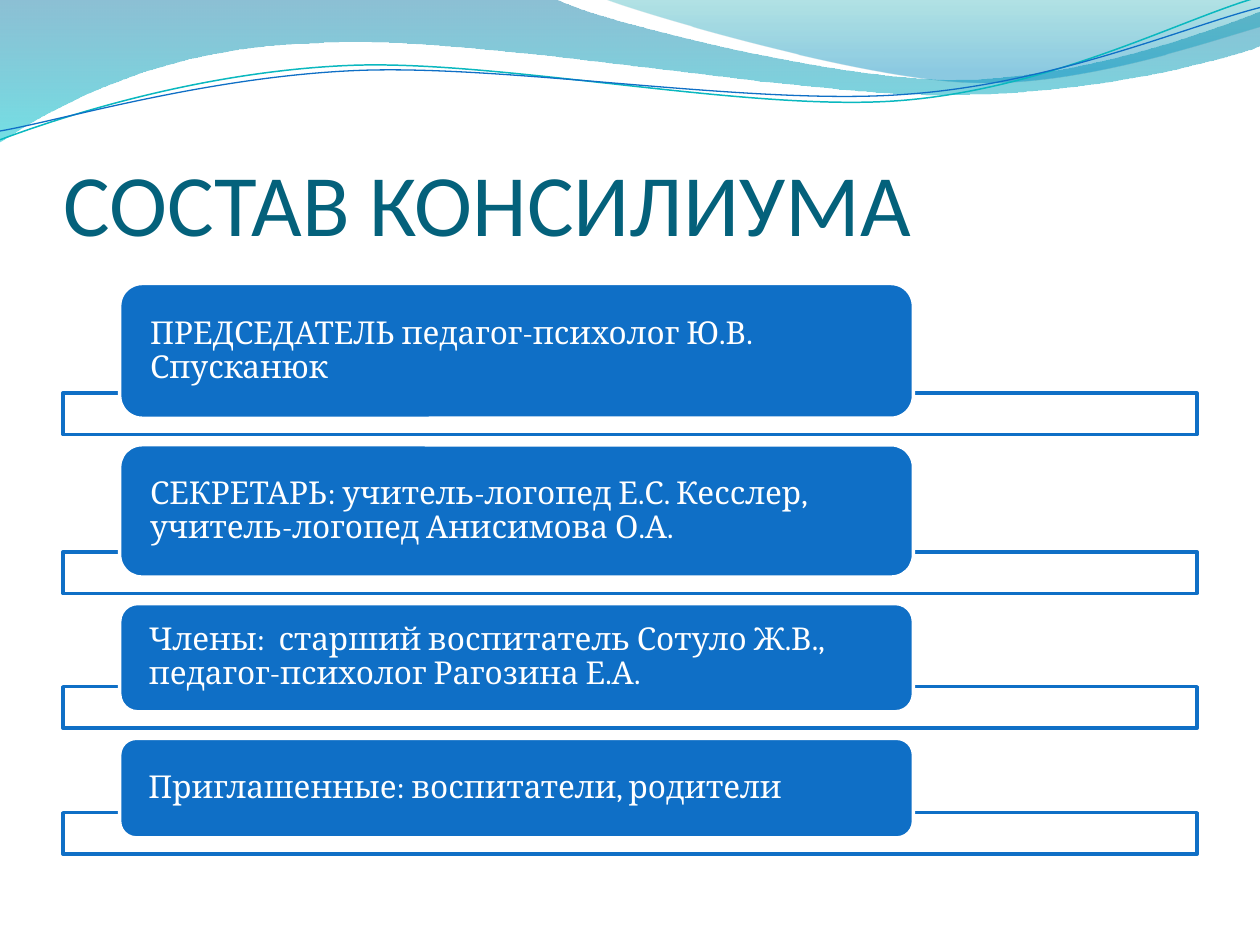
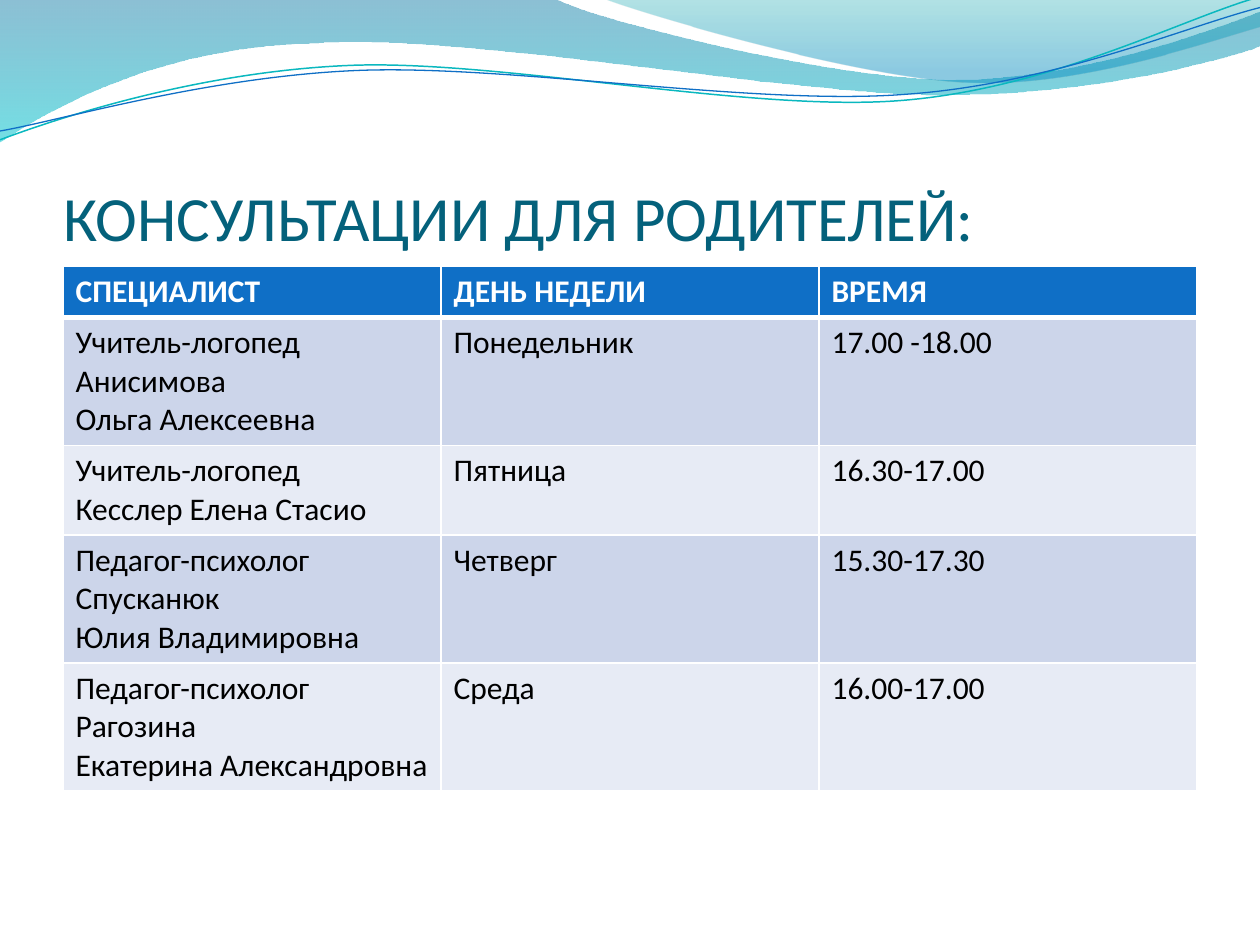
from pptx import Presentation
from pptx.dml.color import RGBColor
from pptx.enum.shapes import MSO_SHAPE
from pptx.enum.text import MSO_ANCHOR, PP_ALIGN
from pptx.oxml import parse_xml
from pptx.oxml.ns import nsdecls, qn
from pptx.util import Pt

PX = 9144
RECT, ROUND = MSO_SHAPE.RECTANGLE, MSO_SHAPE.ROUNDED_RECTANGLE
TOP, MIDDLE, BOTTOM = MSO_ANCHOR.TOP, MSO_ANCHOR.MIDDLE, MSO_ANCHOR.BOTTOM
LEFT = PP_ALIGN.LEFT

WHITE, BLACK, BLUE, TEAL, TITLE = "FFFFFF", "000000", "0F6FC6", "0AB8BF", "04617B"
BANDS = ("CCD5EA", "E7EBF5")
SANS, SERIF = "Calibri", "Cambria"
MARGIN, CONTENT_W = 50, 900

LEFT_WAVE = [
    (0, 0), (440, -1), (476, 17, 664, 63, 758, 63), (853, 63, 958, 26, 1000, 9),
    (1001, 36), (983, 44, 870, 76, 746, 75), (622, 75, 382, 28, 257, 34),
    (129, 36, 46, 83, -1, 113),
]
RIGHT_WAVE = [
    (479, -1), (509, 11, 682, 62, 769, 65), (856, 69, 961, 32, 1000, 21), (1000, 0),
]
TEAL_LINE = [
    (0, 111), (48, 93, 158, 57, 277, 52), (395, 47, 593, 89, 713, 80),
    (833, 71, 938, 15, 998, -2),
]
BLUE_LINE = [
    (0, 104), (47, 96, 164, 61, 283, 56), (403, 51, 597, 84, 717, 75),
    (836, 67, 941, 21, 1000, 6),
]

MEMBERS = [
    ("ПРЕДСЕДАТЕЛЬ педагог-психолог Ю.В. Спусканюк", 107),
    ("СЕКРЕТАРЬ: учитель-логопед Е.С. Кесслер, учитель-логопед Анисимова О.А.", 105),
    ("Члены:  старший воспитатель Сотуло Ж.В., педагог-психолог Рагозина Е.А.", 86),
    ("Приглашенные: воспитатели, родители", 79),
]
CONSULTATIONS = [
    ("СПЕЦИАЛИСТ", "ДЕНЬ НЕДЕЛИ", "ВРЕМЯ"),
    ("Учитель-логопед\nАнисимова\nОльга Алексеевна", "Понедельник", "17.00 -18.00"),
    ("Учитель-логопед\nКесслер Елена Стасио", "Пятница", "16.30-17.00"),
    ("Педагог-психолог\nСпусканюк\nЮлия Владимировна", "Четверг", "15.30-17.30"),
    ("Педагог-психолог\nРагозина\nЕкатерина Александровна", "Среда", "16.00-17.00"),
]


def rgb(color):
    return RGBColor.from_string(color)


def emu(*lengths):
    return [n * PX for n in lengths]


def style_text(tf, font, size, color, bold=False):
    for p in tf.paragraphs:
        p.alignment = LEFT
        p.font.name, p.font.size, p.font.bold = font, Pt(size), bold
        p.font.color.rgb = rgb(color)


def set_insets(tf, left, top, right, bottom):
    tf.margin_left, tf.margin_top, tf.margin_right, tf.margin_bottom = emu(
        left, top, right, bottom)


def bend_segments(sp, segments):
    lines = iter(list(sp.element.iter(qn("a:lnTo"))))
    for seg in segments:
        line = next(lines)
        if len(seg) == 2:
            continue
        curve = parse_xml(f'<a:cubicBezTo {nsdecls("a")}/>')
        line.addprevious(curve)
        for part in (line, next(lines), next(lines)):
            curve.append(part[0])
            part.getparent().remove(part)


def add_outline(slide, outline, close):
    start, *segments = outline
    points = [emu(*seg[i:i + 2]) for seg in segments for i in range(0, len(seg), 2)]
    builder = slide.shapes.build_freeform(*emu(*start))
    builder.add_line_segments(points, close=close)
    sp = builder.convert_to_shape()
    bend_segments(sp, segments)
    sp.shadow.inherit = False
    sp.fill.background()
    return sp


def add_wave(slide, outline, stops):
    sp = add_outline(slide, outline, True)
    sp.line.fill.background()
    gs = "".join(
        f'<a:gs pos="{pos * 1000}"><a:srgbClr val="{color}">'
        f'<a:alpha val="{alpha * 1000}"/></a:srgbClr></a:gs>'
        for pos, color, alpha in stops)
    spPr = sp.element.spPr
    spPr.replace(spPr.find(qn("a:noFill")), parse_xml(
        f'<a:gradFill {nsdecls("a")}><a:gsLst>{gs}</a:gsLst>'
        '<a:lin ang="5400000" scaled="0"/></a:gradFill>'))
    return sp


def add_curve(slide, outline, color, width):
    sp = add_outline(slide, outline, False)
    sp.line.color.rgb = rgb(color)
    sp.line.width = Pt(width)
    return sp


def decorate_layout(layout, slide):
    waves = [
        add_wave(slide, LEFT_WAVE, [(0, "0074A1", 45), (100, "00C6CF", 55)]),
        add_wave(slide, RIGHT_WAVE, [(0, "00A1A9", 30), (80, "008BBF", 45)]),
        add_curve(slide, TEAL_LINE, TEAL, 0.85),
        add_curve(slide, BLUE_LINE, BLUE, 0.75),
    ]
    for sp in waves:
        layout.shapes.element.append(sp.element)


def set_title(slide, text, size):
    sp = slide.shapes.title
    sp.left, sp.top, sp.width, sp.height = emu(MARGIN, 77, CONTENT_W, 125)
    tf = sp.text_frame
    tf.text = text
    tf.vertical_anchor = BOTTOM
    set_insets(tf, 0, 5, 0, 0)
    style_text(tf, SANS, size, TITLE)


def add_box(slide, kind, x, y, w, h, fill, line):
    sp = slide.shapes.add_shape(kind, *emu(x, y, w, h))
    sp.shadow.inherit = False
    sp.fill.solid()
    sp.fill.fore_color.rgb = rgb(fill)
    sp.line.color.rgb = rgb(line)
    sp.line.width = Pt(2)
    return sp


def add_members(slide, members):
    bar_h, overlap, gap = 33, 20, 8
    y = 225
    for text, h in members:
        bar_y = y + h - overlap
        add_box(slide, RECT, MARGIN, bar_y, CONTENT_W, bar_h, WHITE, BLUE)
        sp = add_box(slide, ROUND, 95, y, 630, h, BLUE, WHITE)
        tf = sp.text_frame
        tf.text = text
        tf.word_wrap = True
        tf.vertical_anchor = MIDDLE
        set_insets(tf, 19, 0, 19, 0)
        style_text(tf, SERIF, 18, WHITE)
        tf.paragraphs[0].line_spacing = 0.9
        y = bar_y + bar_h + gap


def add_border(cell, side, width):
    cell._tc.get_or_add_tcPr().append(parse_xml(
        f'<a:ln{side} {nsdecls("a")} w="{Pt(width)}"><a:solidFill>'
        f'<a:srgbClr val="{WHITE}"/></a:solidFill></a:ln{side}>'))


def format_cell(cell, text, row):
    header = row == 0
    cell.text = text
    cell.vertical_anchor = TOP
    style_text(cell.text_frame, SANS, 18, WHITE if header else BLACK, header)
    for side in "LRTB":
        thick = (side == "B" and header) or (side == "T" and row == 1)
        add_border(cell, side, 3 if thick else 1)
    cell.fill.solid()
    cell.fill.fore_color.rgb = rgb(BLUE if header else BANDS[(row - 1) % 2])


def add_schedule(slide, rows):
    heights = [11 + 30 * (row[0].count("\n") + 1) for row in rows]
    frame = slide.shapes.add_table(
        len(rows), len(rows[0]), *emu(MARGIN, 211, CONTENT_W, sum(heights)))
    table = frame.table
    table.horz_banding = False
    for i, row in enumerate(rows):
        table.rows[i].height = heights[i] * PX
        for j, text in enumerate(row):
            format_cell(table.cell(i, j), text, i)


def main():
    prs = Presentation()
    prs.slide_width, prs.slide_height = emu(1000, 750)
    layout = prs.slide_layouts[5]

    slide = prs.slides.add_slide(layout)
    decorate_layout(layout, slide)
    set_title(slide, "СОСТАВ КОНСИЛИУМА", 50)
    add_members(slide, MEMBERS)

    slide = prs.slides.add_slide(layout)
    set_title(slide, "КОНСУЛЬТАЦИИ ДЛЯ РОДИТЕЛЕЙ:", 36)
    add_schedule(slide, CONSULTATIONS)

    prs.save("out.pptx")


if __name__ == "__main__":
    main()
